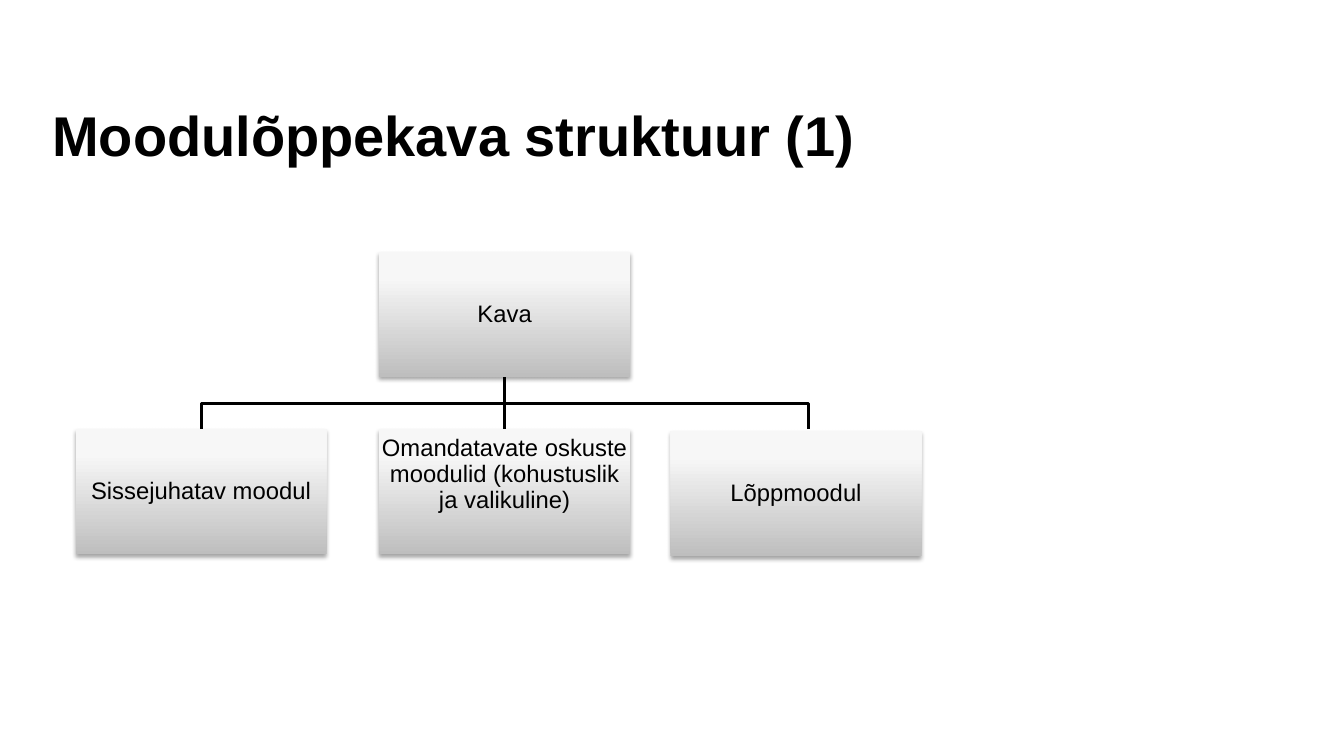
from dataclasses import dataclass

from lxml import etree
from pptx import Presentation
from pptx.dml.color import RGBColor
from pptx.enum.shapes import MSO_SHAPE
from pptx.enum.text import MSO_ANCHOR, PP_ALIGN
from pptx.oxml import parse_xml
from pptx.oxml.ns import nsdecls
from pptx.util import Inches, Pt

RECTANGLE = MSO_SHAPE.RECTANGLE
TOP, MIDDLE = MSO_ANCHOR.TOP, MSO_ANCHOR.MIDDLE
LEFT, CENTER = PP_ALIGN.LEFT, PP_ALIGN.CENTER


@dataclass(frozen=True)
class Theme:
    font: str = "Arial"
    ink: str = "000000"
    paper: str = "FFFFFF"
    gradient: tuple = ((0, "BEBEBE"), (80, "F7F7F7"), (100, "F8F8F8"))
    title_size: int = 40
    node_size: int = 17
    line_width: int = 2
    line_spacing: float = 0.9


@dataclass(frozen=True)
class Box:
    left: float
    top: float
    width: float
    height: float

    @property
    def center(self):
        return self.left + self.width / 2

    @property
    def bottom(self):
        return self.top + self.height

    def lengths(self):
        return [Inches(v) for v in (self.left, self.top, self.width, self.height)]


THEME = Theme()
TITLE_BOX = Box(0.42, 1.07, 11.5, 0.7)
CHART_BOX = Box(0.75, 2.5, 8.51, 3)
NODE_WIDTH, NODE_HEIGHT = 2.49, 1.24
ROOT = "Kava"
# Label, horizontal and vertical shift from the grid, bottom inset
BRANCHES = (
    ("Sissejuhatav moodul", 0, 0, 0.01),
    ("Omandatavate oskuste moodulid (kohustuslik ja valikuline)", 0, 0, 0.35),
    ("Lõppmoodul", -0.12, 0.02, 0.01),
)


def write_text(shape, text, size, align, anchor, bold=False):
    frame = shape.text_frame
    frame.word_wrap = True
    frame.vertical_anchor = anchor
    para = frame.paragraphs[0]
    para.alignment = align
    para.line_spacing = THEME.line_spacing
    span = para.add_run()
    span.text = text
    span.font.name = THEME.font
    span.font.size = Pt(size)
    span.font.bold = bold
    span.font.color.rgb = RGBColor.from_string(THEME.ink)
    return frame


def add_title(slide, box, text):
    shape = slide.shapes.add_textbox(*box.lengths())
    frame = write_text(shape, text, THEME.title_size, LEFT, TOP, bold=True)
    frame.margin_top = 0


def shade(shape):
    """Give the shape an upward gradient and a soft shadow below."""
    stops = "".join(
        f'<a:gs pos="{position * 1000}"><a:srgbClr val="{color}"/></a:gs>'
        for position, color in THEME.gradient
    )
    gradient = parse_xml(
        f'<a:gradFill {nsdecls("a")} rotWithShape="1"><a:gsLst>{stops}</a:gsLst>'
        '<a:lin ang="16200000" scaled="0"/></a:gradFill>'
    )
    shadow = parse_xml(
        f'<a:effectLst {nsdecls("a")}><a:outerShdw blurRad="{Pt(3.1)}" '
        f'dist="{Pt(1.8)}" dir="5400000" rotWithShape="0">'
        f'<a:srgbClr val="{THEME.ink}"><a:alpha val="35000"/></a:srgbClr>'
        "</a:outerShdw></a:effectLst>"
    )
    shape.line.fill.background()
    properties = shape.element.spPr
    properties.find("{*}prstGeom").addnext(gradient)
    etree.SubElement(properties, shadow.tag).extend(shadow)


def add_node(slide, box, text, bottom_inset=0.01):
    shape = slide.shapes.add_shape(RECTANGLE, *box.lengths())
    shade(shape)
    frame = write_text(shape, text, THEME.node_size, CENTER, MIDDLE)
    frame.margin_left = frame.margin_top = frame.margin_right = Inches(0.01)
    frame.margin_bottom = Inches(bottom_inset)


def add_branch_line(slide, root, end_x, end_y):
    middle_y = (root.bottom + end_y) / 2
    points = [(root.center, middle_y), (end_x, middle_y), (end_x, end_y)]
    if end_x == root.center:
        points = points[-1:]
    builder = slide.shapes.build_freeform(
        Inches(root.center), Inches(root.bottom), scale=1.0
    )
    builder.add_line_segments(
        [(Inches(x), Inches(y)) for x, y in points], close=False
    )
    shape = builder.convert_to_shape()
    shape.fill.background()
    shape.line.color.rgb = RGBColor.from_string(THEME.ink)
    shape.line.width = Pt(THEME.line_width)
    shape.shadow.inherit = False


def add_tree(slide, box, root_text, branches):
    """Place the root over the middle of an evenly spaced row of branches."""
    step = (box.width - NODE_WIDTH) / (len(branches) - 1)
    row_top = box.bottom - NODE_HEIGHT
    slots = [
        Box(box.left + step * i, row_top, NODE_WIDTH, NODE_HEIGHT)
        for i in range(len(branches))
    ]
    root = Box(slots[len(slots) // 2].left, box.top, NODE_WIDTH, NODE_HEIGHT)
    for slot in slots:
        add_branch_line(slide, root, slot.center, row_top)
    add_node(slide, root, root_text)
    for slot, (text, shift_x, shift_y, inset) in zip(slots, branches):
        node = Box(slot.left + shift_x, slot.top + shift_y, slot.width, slot.height)
        add_node(slide, node, text, inset)


def main():
    deck = Presentation()
    deck.slide_width, deck.slide_height = Inches(13.33), Inches(7.5)
    slide = deck.slides.add_slide(deck.slide_layouts[6])
    slide.background.fill.solid()
    slide.background.fill.fore_color.rgb = RGBColor.from_string(THEME.paper)
    add_title(slide, TITLE_BOX, "Moodulõppekava struktuur (1)")
    add_tree(slide, CHART_BOX, ROOT, BRANCHES)
    deck.save("out.pptx")


if __name__ == "__main__":
    main()
